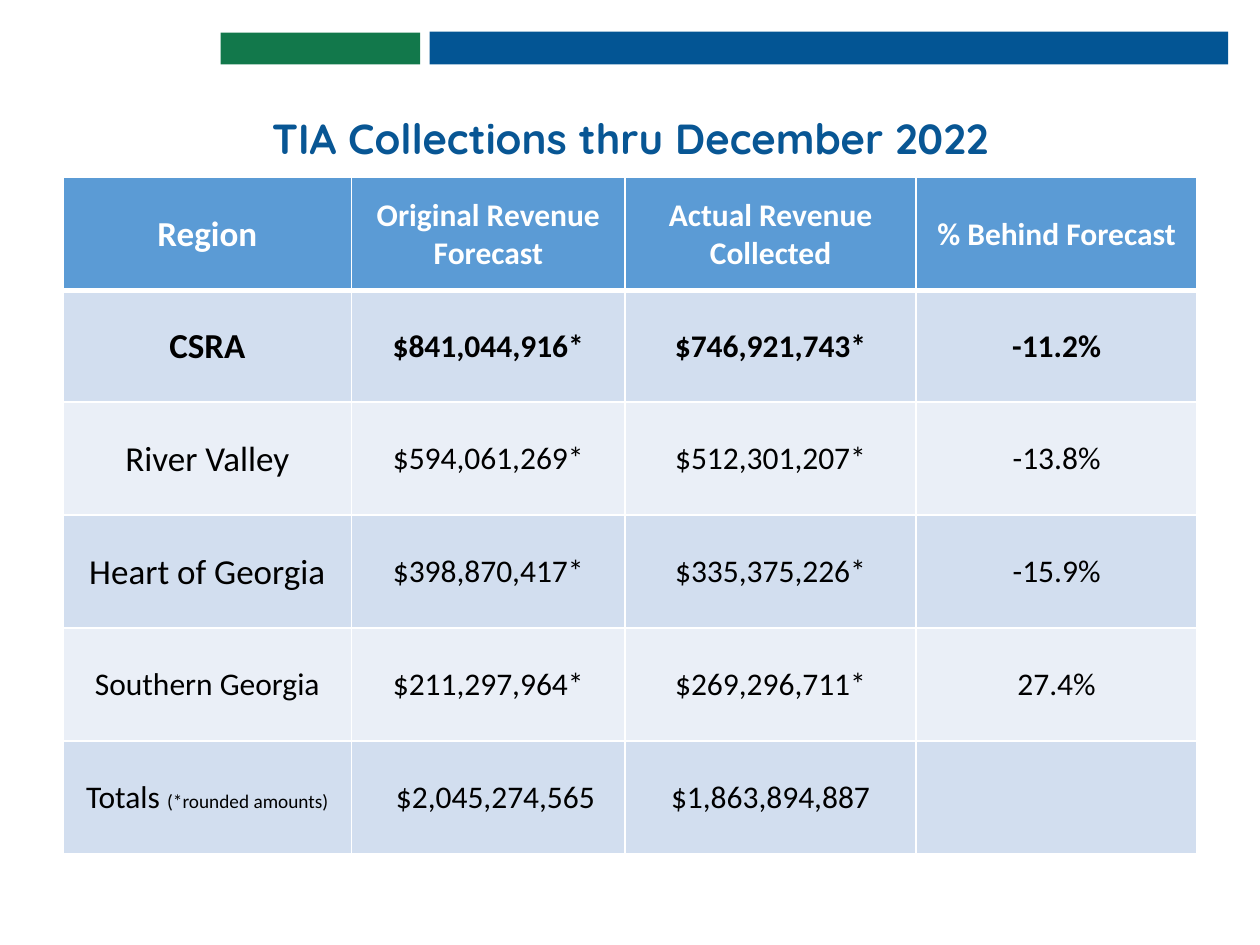
from lxml import etree
from pptx import Presentation
from pptx.dml.color import RGBColor
from pptx.enum import shapes, text
from pptx.oxml.ns import qn
from pptx.util import Cm, Pt


def paint(color_format, hex_color):
    color_format.rgb = RGBColor.from_string(hex_color)


def add_border(cell, side, points):
    line = etree.SubElement(cell._tc.get_or_add_tcPr(), qn(f"a:ln{side}"), w=str(Pt(points)))
    fill = etree.SubElement(line, qn("a:solidFill"))
    etree.SubElement(fill, qn("a:srgbClr"), val="FFFFFF")


prs = Presentation()
prs.slide_width, prs.slide_height = Cm(25.4), Cm(19.05)
slide = prs.slides.add_slide(prs.slide_layouts[5])

# Header bars, aligned at the bottom
bars_bottom = 1.3
for left, width, height, color in [(8.66, 16.1, 0.66, "035594"), (4.45, 4.02, 0.64, "12784B")]:
    bar = slide.shapes.add_shape(shapes.MSO_SHAPE.RECTANGLE, Cm(left), Cm(bars_bottom - height),
                                 Cm(width), Cm(height))
    bar.shadow.inherit = False
    bar.fill.solid()
    paint(bar.fill.fore_color, color)
    bar.line.fill.background()

# Title
title = slide.shapes.title
title.left, title.top, title.width, title.height = Cm(0), Cm(1.83), Cm(25.4), Cm(1.6)
title.text_frame.text = "TIA Collections thru December 2022"
title.text_frame.vertical_anchor = text.MSO_ANCHOR.BOTTOM
heading = title.text_frame.paragraphs[0]
heading.alignment = text.PP_ALIGN.CENTER
heading.line_spacing = 0.9
heading_font = heading.runs[0].font
heading_font.name, heading_font.size, heading_font.bold = "Quicksand", Pt(24), True
paint(heading_font.color, "085694")

# Revenue table
collections = [
    ["Region", "Original Revenue Forecast", "Actual Revenue Collected", "% Behind Forecast"],
    ["CSRA", "$841,044,916*", "$746,921,743*", "-11.2%"],
    ["River Valley", "$594,061,269*", "$512,301,207*", "-13.8%"],
    ["Heart of Georgia", "$398,870,417*", "$335,375,226*", "-15.9%"],
    ["Southern Georgia", "$211,297,964*", "$269,296,711*", "27.4%"],
    ["Totals ", "$2,045,274,565", "$1,863,894,887", ""],
]
column_widths = [5.82, 5.51, 5.87, 5.66]
row_heights = [2.28, 2.24, 2.28, 2.28, 2.28, 2.28]
table = slide.shapes.add_table(len(collections), len(column_widths), Cm(1.27), Cm(3.58),
                               Cm(sum(column_widths)), Cm(sum(row_heights))).table
for column, width in zip(table.columns, column_widths):
    column.width = Cm(width)
for row, height in zip(table.rows, row_heights):
    row.height = Cm(height)

for r, region in enumerate(collections):
    for c, value in enumerate(region):
        cell = table.cell(r, c)
        cell.margin_left = cell.margin_right = cell.margin_top = Cm(0.03)
        cell.margin_bottom = Cm(0)
        cell.vertical_anchor = text.MSO_ANCHOR.MIDDLE

        # White grid, heavier around the header's lower edge
        for side in "LRTB":
            under_header = (r, side) in [(0, "B"), (1, "T")]
            add_border(cell, side, 3 if under_header else 1)
        cell.fill.solid()
        paint(cell.fill.fore_color, "5B9BD5" if r == 0 else "D2DEEF" if r % 2 else "EAEFF7")

        entry = cell.text_frame.paragraphs[0]
        entry.alignment = text.PP_ALIGN.CENTER
        if not value:
            continue
        entry.text = value
        font = entry.runs[0].font
        font.name, font.bold = "Calibri", r < 2
        font.size = Pt(20 if c == 0 and r < 4 else 18)
        paint(font.color, "FFFFFF" if r == 0 else "000000")

# Totals row: small note, and the forecast total set slightly to the right
note = table.cell(5, 0).text_frame.paragraphs[0].add_run()
note.text = "(*rounded amounts)"
note.font.name, note.font.size, note.font.bold = "Calibri", Pt(11), False
paint(note.font.color, "000000")
table.cell(5, 1).margin_left = Cm(0.32)

prs.save("out.pptx")
